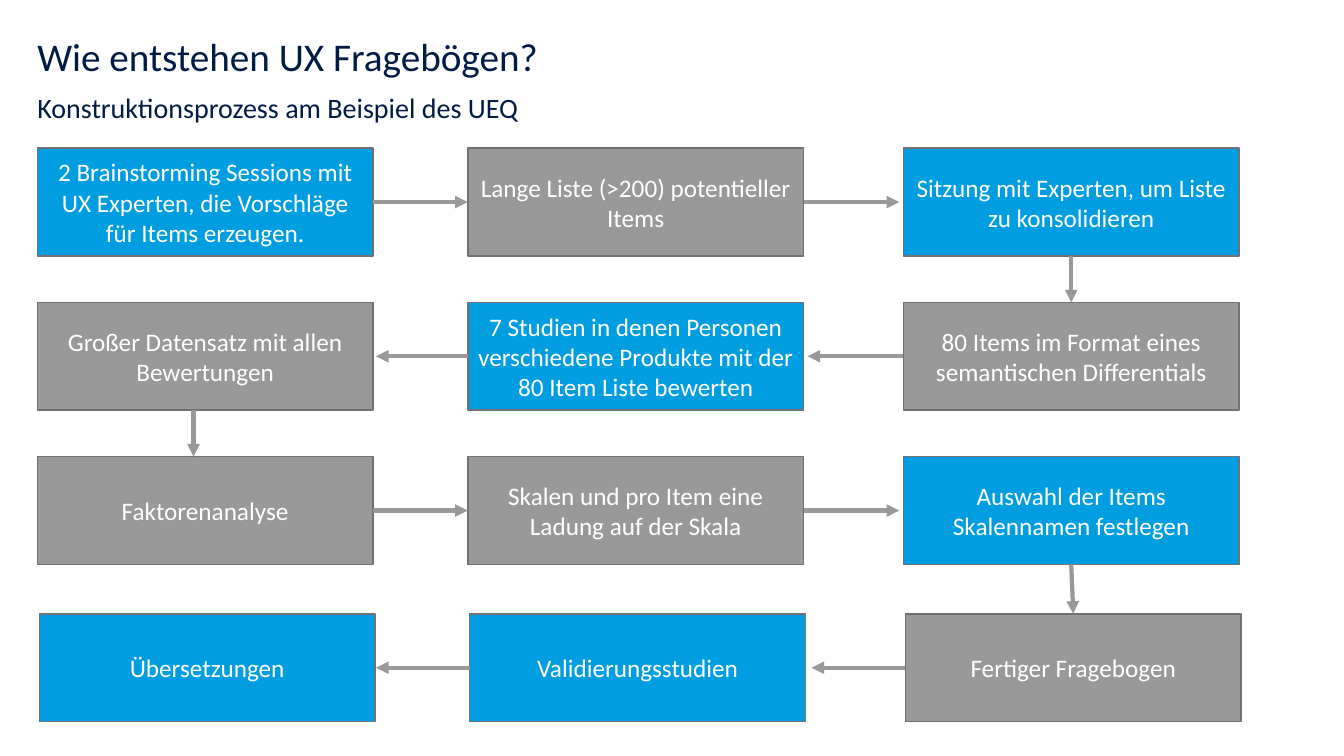
from lxml.etree import SubElement
from pptx import Presentation
from pptx.dml.color import RGBColor
from pptx.enum.shapes import MSO_CONNECTOR, MSO_SHAPE
from pptx.enum.text import MSO_ANCHOR, PP_ALIGN
from pptx.oxml.ns import qn
from pptx.util import Inches, Pt

NAVY = RGBColor(0x02, 0x1B, 0x45)
BLUE = RGBColor(0x00, 0x9D, 0xE0)
GRAY = RGBColor(0x99, 0x99, 0x99)
BORDER = RGBColor(0x71, 0x71, 0x71)
WHITE = RGBColor(0xFF, 0xFF, 0xFF)
FONT = "Calibri"

TITLE = "Wie entstehen UX Fragebögen?"
SUBTITLE = "Konstruktionsprozess am Beispiel des UEQ"

# Steps in process order: text, fill, gap between the outgoing arrow's tip and the next box
STEPS = [
    ("2 Brainstorming Sessions mit UX Experten, die Vorschläge für Items erzeugen.", BLUE, 0),
    ("Lange Liste (>200) potentieller Items", GRAY, 0.04),
    ("Sitzung mit Experten, um Liste zu konsolidieren", BLUE, 0),
    ("80 Items im Format eines semantischen Differentials", GRAY, 0.04),
    ("7 Studien in denen Personen verschiedene Produkte mit der 80 Item Liste bewerten", BLUE, 0.03),
    ("Großer Datensatz mit allen Bewertungen", GRAY, 0),
    ("Faktorenanalyse", GRAY, 0),
    ("Skalen und pro Item eine Ladung auf der Skala", GRAY, 0.04),
    ("Auswahl der Items\nSkalennamen festlegen", BLUE, 0),
    ("Fertiger Fragebogen", GRAY, 0.06),
    ("Validierungsstudien", BLUE, 0.01),
    ("Übersetzungen", BLUE, None),
]

COLUMN_LEFTS = (0.37, 4.64, 8.96)
ROW_TOPS = (1.47, 3.0, 4.53, 6.09)
LAST_ROW_SHIFT = 0.02
BOX_WIDTH, BOX_HEIGHT = 3.33, 1.07
LEFT_DROP_X = 1.92
TOP, LEFT, BOTTOM, RIGHT = range(4)


def add_text(paragraph, text, size, color):
    run = paragraph.add_run()
    run.text = text
    run.font.name = FONT
    run.font.size = Pt(size)
    run.font.color.rgb = color


def add_heading(slide, text, top, height, size, anchor):
    box = slide.shapes.add_textbox(Inches(0.37), Inches(top), Inches(12.6), Inches(height))
    frame = box.text_frame
    frame.word_wrap = True
    frame.vertical_anchor = anchor
    frame.margin_left = frame.margin_right = frame.margin_top = frame.margin_bottom = 0
    add_text(frame.paragraphs[0], text, size, NAVY)
    return frame.paragraphs[0]


def grid_cell(index):
    """Return row and column; every second row runs from right to left."""
    row, column = divmod(index, len(COLUMN_LEFTS))
    return row, column if row % 2 == 0 else len(COLUMN_LEFTS) - 1 - column


def add_step(slide, index, text, fill):
    row, column = grid_cell(index)
    left = COLUMN_LEFTS[column] + (LAST_ROW_SHIFT if row == len(ROW_TOPS) - 1 else 0)
    shape = slide.shapes.add_shape(
        MSO_SHAPE.RECTANGLE, Inches(left), Inches(ROW_TOPS[row]),
        Inches(BOX_WIDTH), Inches(BOX_HEIGHT))
    shape.shadow.inherit = False
    shape.fill.solid()
    shape.fill.fore_color.rgb = fill
    shape.line.color.rgb = BORDER
    shape.line.width = Pt(1)
    frame = shape.text_frame
    frame.word_wrap = True
    frame.vertical_anchor = MSO_ANCHOR.MIDDLE
    for number, line in enumerate(text.split("\n")):
        paragraph = frame.add_paragraph() if number else frame.paragraphs[0]
        paragraph.alignment = PP_ALIGN.CENTER
        add_text(paragraph, line, 18, WHITE)
    return shape


def side_middle(shape, side):
    x = shape.left + {LEFT: 0, RIGHT: shape.width}.get(side, shape.width // 2)
    y = shape.top + {TOP: 0, BOTTOM: shape.height}.get(side, shape.height // 2)
    return x, y


def add_arrow(slide, source, target, index, gap):
    row, column = grid_cell(index)
    next_row, next_column = grid_cell(index + 1)
    if next_row > row:
        start_side, end_side = BOTTOM, TOP
    elif next_column > column:
        start_side, end_side = RIGHT, LEFT
    else:
        start_side, end_side = LEFT, RIGHT
    start_x, start_y = side_middle(source, start_side)
    end_x, end_y = side_middle(target, end_side)
    off_centre = next_row > row and column == 0
    if off_centre:
        start_x = end_x = Inches(LEFT_DROP_X)
    elif gap:
        end_x += Inches(gap) if end_side == RIGHT else -Inches(gap)
        end_y = start_y
    arrow = slide.shapes.add_connector(MSO_CONNECTOR.STRAIGHT, start_x, start_y, end_x, end_y)
    if not off_centre:
        arrow.begin_connect(source, start_side)
        if not gap:
            arrow.end_connect(target, end_side)
    arrow.line.color.rgb = GRAY
    arrow.line.width = Pt(3)
    SubElement(arrow.line._get_or_add_ln(), qn("a:tailEnd"), type="triangle")
    SubElement(arrow._element.spPr, qn("a:effectLst"))


def main():
    presentation = Presentation()
    presentation.slide_width, presentation.slide_height = Inches(13.33), Inches(7.5)
    slide = presentation.slides.add_slide(presentation.slide_layouts[6])
    title = add_heading(slide, TITLE, 0.33, 0.5, 28, MSO_ANCHOR.MIDDLE)
    title.line_spacing = 0.9
    add_heading(slide, SUBTITLE, 0.9, 0.33, 20, MSO_ANCHOR.TOP)
    boxes = [add_step(slide, index, text, fill) for index, (text, fill, _) in enumerate(STEPS)]
    for index, (source, target) in enumerate(zip(boxes, boxes[1:])):
        add_arrow(slide, source, target, index, STEPS[index][2])
    presentation.save("out.pptx")


if __name__ == "__main__":
    main()
